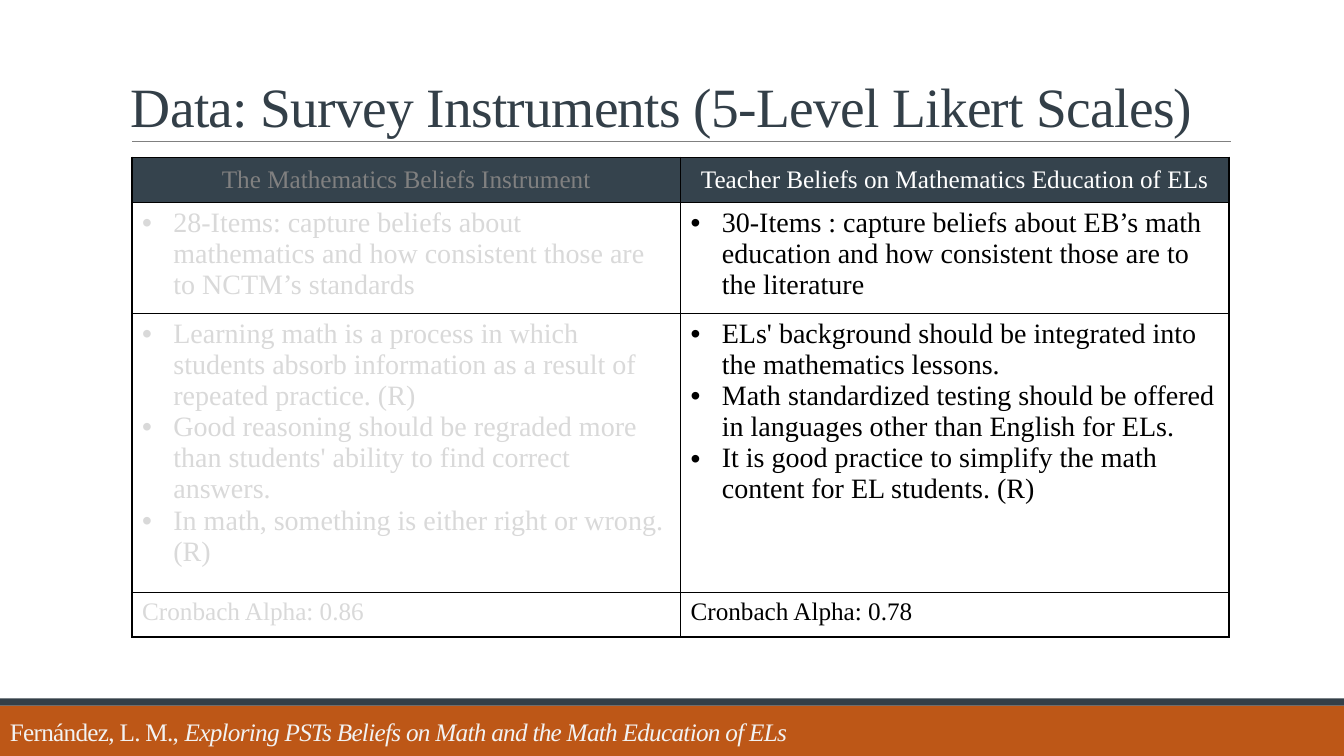
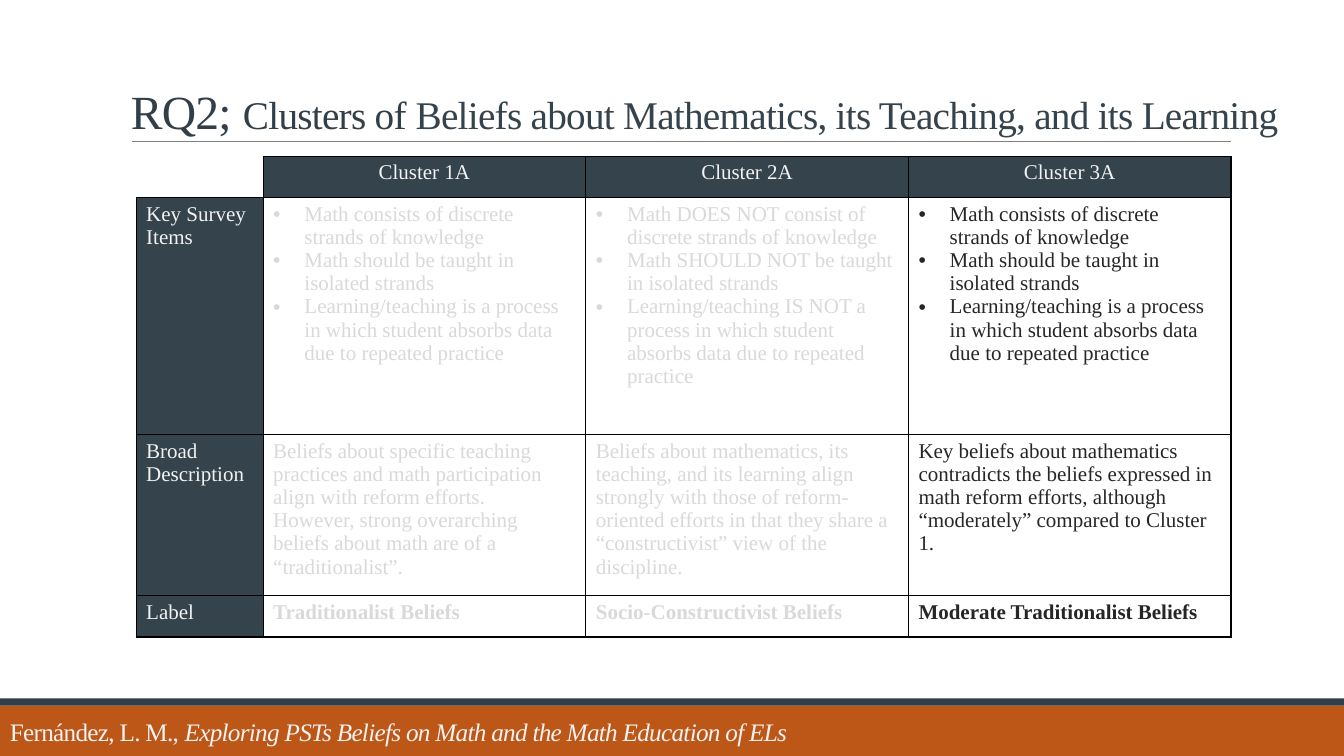
"""Build two slides on survey instruments and belief clusters."""
from dataclasses import dataclass

from lxml import etree
from pptx import Presentation
from pptx.dml.color import RGBColor
from pptx.enum.shapes import MSO_CONNECTOR, MSO_SHAPE
from pptx.enum.text import MSO_ANCHOR, PP_ALIGN
from pptx.oxml.ns import qn
from pptx.util import Inches, Pt

RECTANGLE = MSO_SHAPE.RECTANGLE
STRAIGHT = MSO_CONNECTOR.STRAIGHT
BOTTOM, MIDDLE, TOP = MSO_ANCHOR.BOTTOM, MSO_ANCHOR.MIDDLE, MSO_ANCHOR.TOP
CENTER, LEFT = PP_ALIGN.CENTER, PP_ALIGN.LEFT


@dataclass(frozen=True)
class Theme:
    """Colours, font and type sizes shared by the slides."""
    font: str = "Times New Roman"
    slate: str = "333F48"
    heading_fill: str = "35434D"
    rust: str = "BD5717"
    rule: str = "808080"
    border: str = "000000"
    pale: str = "F2F2F2"
    muted: str = "D9D9D9"
    title: float = 39.6
    title_lead: float = 34
    title_rest: float = 28
    footer: float = 18
    large: float = 20
    medium: float = 18
    small: float = 15
    tracking: str = "-50"


THEME = Theme()

FOOTER = [
    ("Fernández, L. M., ", {"size": Pt(THEME.footer)}, THEME.pale),
    ("Exploring PSTs Beliefs on Math and the Math Education of ELs",
     {"size": Pt(THEME.footer), "italic": True}, THEME.pale),
]

SLIDES = [
    {
        "title": [("Data: Survey Instruments (5-Level Likert Scales)",
                   {"size": Pt(THEME.title)}, THEME.slate)],
        "title_width": 11,
        "origin": (1.31, 1.56),
        "columns": [5.44, 5.44],
        "heading_columns": 0,
        "heading_anchor": MIDDLE,
        "heading_colours": ["808080", "FFFFFF"],
        "ink": "000000",
        "rows": [
            {"height": 0.45, "size": THEME.medium, "cells": [
                ["The Mathematics Beliefs Instrument"],
                ["Teacher Beliefs on Mathematics Education of ELs"]]},
            {"height": 1.1, "size": THEME.large, "bulleted": True, "cells": [
                ["28-Items: capture beliefs about mathematics and how consistent "
                 "those are to NCTM’s standards"],
                ["30-Items : capture beliefs about EB’s math education and how "
                 "consistent those are to the literature"]]},
            {"height": 2.77, "size": THEME.large, "bulleted": True, "cells": [
                ["Learning math is a process in which students absorb information "
                 "as a result of repeated practice. (R)",
                 "Good reasoning should be regraded more than students' ability "
                 "to find correct answers.",
                 "In math, something is either right or wrong. (R)"],
                ["ELs' background should be integrated into the mathematics lessons.",
                 "Math standardized testing should be offered in languages other "
                 "than English for ELs.",
                 "It is good practice to simplify the math content for EL students. (R)"]]},
            {"height": 0.44, "size": THEME.medium, "cells": [
                ["Cronbach Alpha: 0.86"], ["Cronbach Alpha: 0.78"]]},
        ],
    },
    {
        "title": [
            ("RQ2; ", {"size": Pt(THEME.title_lead)}, THEME.slate),
            ("Clusters of ", {"size": Pt(THEME.title_rest)}, THEME.slate),
            ("Beliefs about Mathematics, its Teaching, and its Learning",
             {"size": Pt(THEME.title_rest)}, THEME.heading_fill),
        ],
        "title_width": 11.74,
        "origin": (1.35, 1.55),
        "columns": [1.26, 3.2, 3.2, 3.2],
        "heading_columns": 1,
        "heading_anchor": TOP,
        "heading_colours": [THEME.pale] * 4,
        "ink": "262626",
        "rows": [
            {"height": 0.41, "size": THEME.small, "cells": [
                [], ["Cluster 1A"], ["Cluster 2A"], ["Cluster 3A"]]},
            {"height": 2.35, "size": THEME.small, "bulleted": True, "cells": [
                ["Key Survey Items"],
                ["Math consists of discrete strands of knowledge",
                 "Math should be taught in isolated strands",
                 "Learning/teaching is a process in which student absorbs data "
                 "due to repeated practice"],
                ["Math DOES NOT consist of discrete strands of knowledge",
                 "Math SHOULD NOT be taught in isolated strands",
                 "Learning/teaching IS NOT a process in which student absorbs data "
                 "due to repeated practice"],
                ["Math consists of discrete strands of knowledge",
                 "Math should be taught in isolated strands",
                 "Learning/teaching is a process in which student absorbs data "
                 "due to repeated practice"]]},
            {"height": 1.6, "size": THEME.small, "cells": [
                ["Broad Description"],
                ["Beliefs about specific teaching practices and math participation "
                 "align with reform efforts.",
                 "However, strong overarching beliefs about math are of a "
                 "“traditionalist”."],
                ["Beliefs about mathematics, its teaching, and its learning align "
                 "strongly with those of reform-oriented efforts in that they share "
                 "a “constructivist” view of the discipline."],
                ["Key beliefs about mathematics contradicts the beliefs expressed in "
                 "math reform efforts, although “moderately” compared to Cluster 1."]]},
            {"height": 0.41, "size": THEME.small, "bold": True, "cells": [
                ["Label"], ["Traditionalist Beliefs"],
                ["Socio-Constructivist Beliefs"],
                ["Moderate Traditionalist Beliefs"]]},
        ],
    },
]


def rgb(colour):
    """Turn a hex string into a colour."""
    return RGBColor.from_string(colour)


def add_run(paragraph, text, formats, colour):
    """Append a formatted run and return it."""
    run = paragraph.add_run()
    run.text = text
    for name, value in {"name": THEME.font, **formats}.items():
        setattr(run.font, name, value)
    run.font.color.rgb = rgb(colour)
    return run


def add_tracked_line(slide, box, runs, anchor, spacing):
    """Add a one-line text box with tightened letters."""
    frame = slide.shapes.add_textbox(*map(Inches, box)).text_frame
    frame.word_wrap = True
    frame.vertical_anchor = anchor
    paragraph = frame.paragraphs[0]
    paragraph.line_spacing = spacing
    for text, formats, colour in runs:
        run = add_run(paragraph, text, formats, colour)
        run.font._element.set("spc", THEME.tracking)


def add_frame(slide, content):
    """Draw the bands, rule, title and footer."""
    for top, height, colour in ((7, 0.5, THEME.rust), (6.93, 0.07, THEME.slate)):
        band = slide.shapes.add_shape(
            RECTANGLE, 0, Inches(top), Inches(13.33), Inches(height))
        band.shadow.inherit = False
        band.fill.solid()
        band.fill.fore_color.rgb = rgb(colour)
        band.line.fill.background()
    rule = slide.shapes.add_connector(
        STRAIGHT, *map(Inches, (1.31, 1.4, 12.21, 1.4)))
    rule.line.color.rgb = rgb(THEME.rule)
    rule.line.width = Pt(0.5)
    etree.SubElement(rule._element.spPr, qn("a:effectLst"))
    add_tracked_line(slide, (1.2, 0.52, content["title_width"], 0.91),
                     content["title"], BOTTOM, 0.85)
    add_tracked_line(slide, (0, 7.06, 10.5, 0.4), FOOTER, TOP, 1.0)


def add_bullet(paragraph):
    """Give a paragraph a hanging round bullet."""
    properties = paragraph._p.get_or_add_pPr()
    properties.set("marL", str(Inches(0.31)))
    properties.set("indent", str(-Inches(0.31)))
    etree.SubElement(properties, qn("a:buFont")).set("typeface", "Arial")
    etree.SubElement(properties, qn("a:buChar")).set("char", "•")


def add_borders(cell, sides):
    """Draw thin lines on the given sides of a cell."""
    properties = cell._tc.get_or_add_tcPr()
    for side in sides:
        line = etree.SubElement(properties, qn(f"a:ln{side}"), w=str(Pt(1)))
        fill = etree.SubElement(line, qn("a:solidFill"))
        etree.SubElement(fill, qn("a:srgbClr"), val=THEME.border)


def fill_cell(cell, content, row, r, c):
    """Style one cell by its place and write its paragraphs."""
    paragraphs = row["cells"][c]
    top_heading = r == 0
    heading = top_heading or c < content["heading_columns"]
    add_borders(cell, "LRTB" if paragraphs else "RB")
    if heading and paragraphs:
        cell.fill.solid()
        cell.fill.fore_color.rgb = rgb(THEME.heading_fill)
    else:
        cell.fill.background()
    cell.vertical_anchor = content["heading_anchor"] if top_heading else TOP

    active = c == len(content["columns"]) - 1
    colour = content["ink"] if active else THEME.muted
    if heading:
        colour = content["heading_colours"][c]
    formats = {"size": Pt(row["size"]),
               "bold": row.get("bold", False) and not heading}
    for index, text in enumerate(paragraphs):
        frame = cell.text_frame
        paragraph = frame.add_paragraph() if index else frame.paragraphs[0]
        paragraph.alignment = CENTER if top_heading else LEFT
        if row.get("bulleted") and not heading:
            add_bullet(paragraph)
        add_run(paragraph, text, formats, colour)


def add_belief_table(slide, content):
    """Add the comparison table with its last column in focus."""
    rows, columns = content["rows"], content["columns"]
    size = sum(columns), sum(row["height"] for row in rows)
    table = slide.shapes.add_table(
        len(rows), len(columns), *map(Inches, content["origin"] + size)).table
    table.first_row = table.horz_banding = False
    for c, width in enumerate(columns):
        table.columns[c].width = Inches(width)
    for r, row in enumerate(rows):
        table.rows[r].height = Inches(row["height"])
        for c in range(len(columns)):
            fill_cell(table.cell(r, c), content, row, r, c)


def main():
    """Build and save the presentation."""
    deck = Presentation()
    deck.slide_width, deck.slide_height = Inches(13.33), Inches(7.5)
    for content in SLIDES:
        slide = deck.slides.add_slide(deck.slide_layouts[6])
        add_frame(slide, content)
        add_belief_table(slide, content)
    deck.save("out.pptx")


if __name__ == "__main__":
    main()
